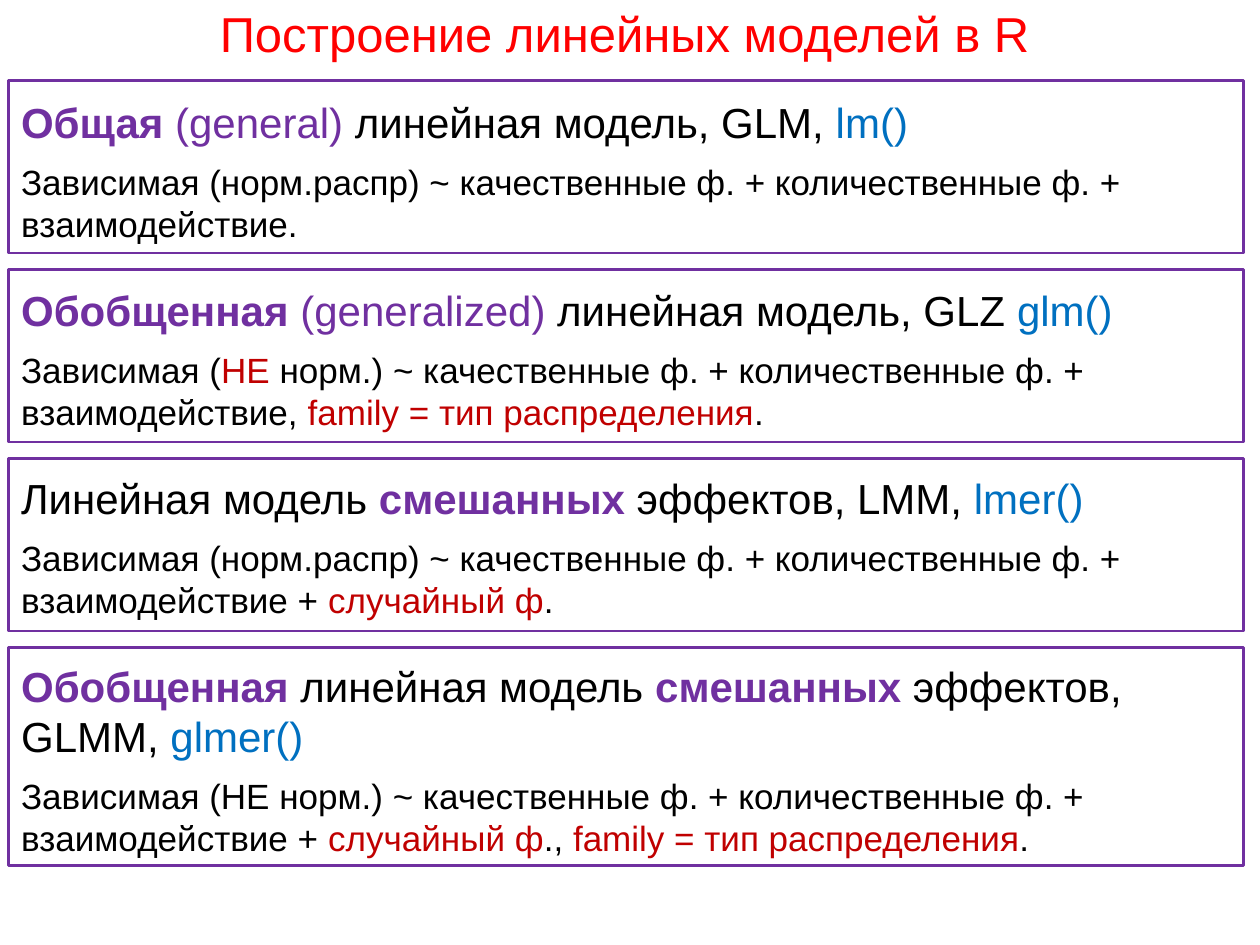
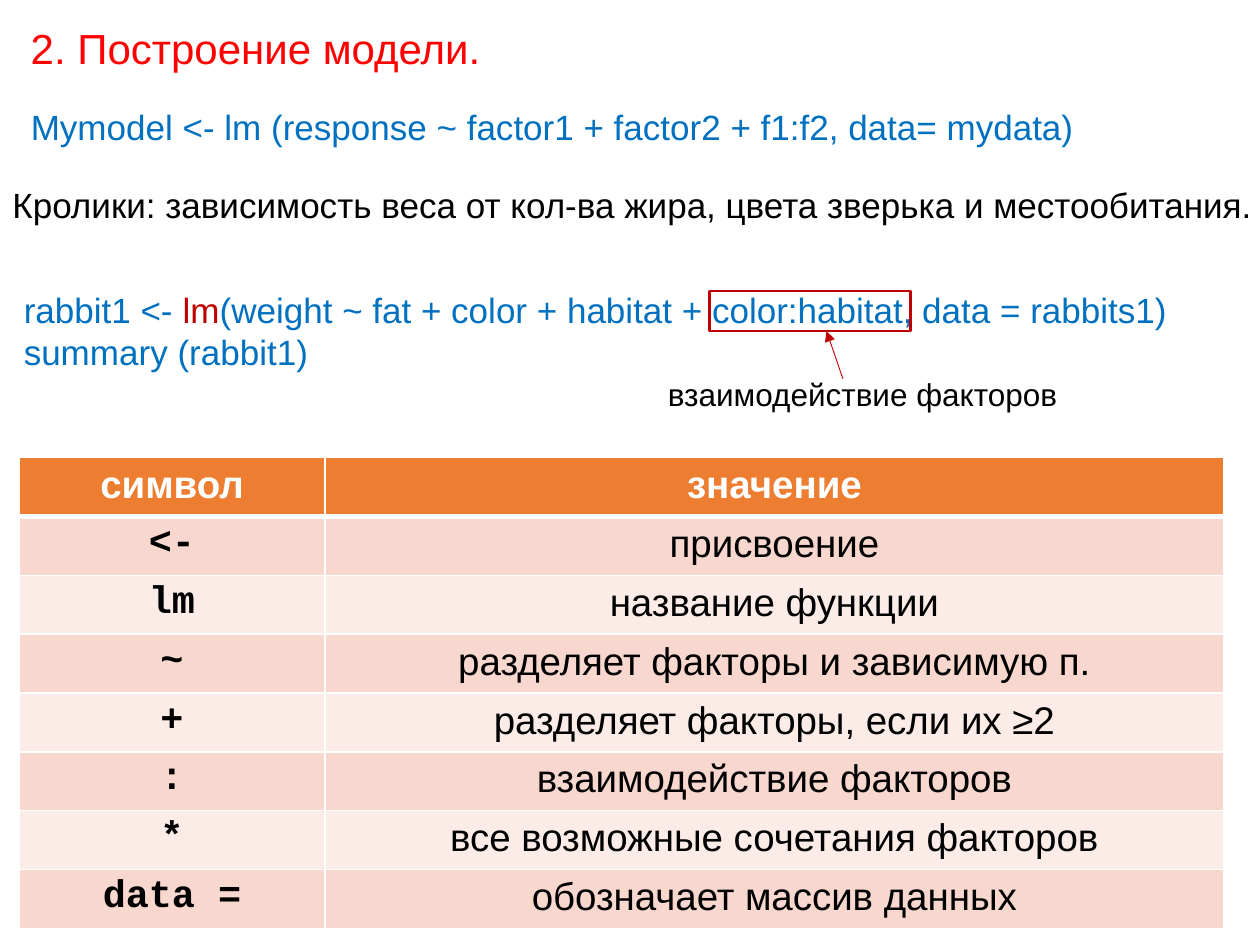
from pptx import Presentation
from pptx.util import Pt
from pptx.dml.color import RGBColor as Rgb
from pptx.enum.shapes import MSO_SHAPE as Shape, MSO_CONNECTOR as Line
from pptx.enum.text import MSO_AUTO_SIZE as Auto, PP_ALIGN as Align
from pptx.oxml.ns import qn
from lxml.etree import SubElement as Sub

RED = Rgb(0xFF, 0, 0)
DARK = Rgb(0xC0, 0, 0)
BLUE = Rgb(0, 0x70, 0xC0)
PLUM = Rgb(0x70, 0x30, 0xA0)
BLACK = Rgb(0, 0, 0)
WHITE = Rgb(0xFF, 0xFF, 0xFF)
HEAD = Rgb(0xED, 0x7D, 0x31)
BANDS = Rgb(0xFC, 0xEC, 0xE8), Rgb(0xF8, 0xD7, 0xCE)
SANS, MONO = "Arial", "Courier New"

NORM = "Зависимая (норм.распр) ~ "
SUM = "качественные ф. + количественные ф. + взаимодействие"
FAMILY = ("family = тип распределения", DARK)
RANDOM = ("случайный ф", DARK)

MODELS = [
    (526.5, 1,
     [("Общая ", PLUM, True), ("(general) ", PLUM),
      "линейная модель, GLM, ", ("lm()", BLUE)],
     [NORM + SUM + "."]),
    (644.5, 1,
     [("Обобщенная ", PLUM, True), ("(generalized) ", PLUM),
      "линейная модель, GLZ ", ("glm()", BLUE)],
     ["Зависимая (", ("НЕ", DARK), " норм.) ~ " + SUM + ", ", FAMILY, "."]),
    (628, 1,
     ["Линейная модель ", ("смешанных ", PLUM, True),
      "эффектов, LMM, ", ("lmer()", BLUE)],
     [NORM + SUM + " + ", RANDOM, "."]),
    (680.5, 2,
     [("Обобщенная ", PLUM, True), "линейная модель ",
      ("смешанных", PLUM, True), " эффектов, GLMM, ", ("glmer()", BLUE)],
     ["Зависимая (НЕ норм.) ~ " + SUM + " + ", RANDOM, "., ", FAMILY, "."]),
]

CALL = [
    [("rabbit1 <- ", BLUE), ("lm", DARK),
     ("(weight ~ fat + color + habitat + color:habitat, data = rabbits1)", BLUE)],
    [("summary (rabbit1)", BLUE)],
]

SIGNS = [
    ("символ", "значение"),
    ("<-", "присвоение"),
    ("lm", "название функции"),
    ("~", "разделяет факторы и зависимую п."),
    ("+", "разделяет факторы, если их ≥2"),
    (":", "взаимодействие факторов"),
    ("*", "все возможные сочетания факторов"),
    ("data =", "обозначает массив данных"),
]


def write(frame, paras, size=20, color=BLACK, bold=False, font=SANS, align=None):
    if isinstance(paras, str):
        paras = [[paras]]
    for i, runs in enumerate(paras):
        para = frame.add_paragraph() if i else frame.paragraphs[0]
        para.alignment = align
        for part in runs:
            text, hue, *thick = (part, color, bold) if isinstance(part, str) else part
            run = para.add_run()
            run.text = text
            run.font.name = font
            run.font.size = Pt(size)
            run.font.bold = bool(thick and thick[0])
            run.font.color.rgb = hue


def label(slide, paras, x, y, w, h, wrap=False, **form):
    frame = slide.shapes.add_textbox(Pt(x), Pt(y), Pt(w), Pt(h)).text_frame
    frame.word_wrap = wrap
    frame.auto_size = Auto.SHAPE_TO_FIT_TEXT
    write(frame, paras, **form)


def outline(slide, x, y, w, h, color):
    box = slide.shapes.add_shape(Shape.RECTANGLE, Pt(x), Pt(y), Pt(w), Pt(h))
    box.shadow.inherit = False
    box.fill.background()
    box.line.color.rgb = color
    box.line.width = Pt(1.5)


def arrow(slide, start, end, color):
    link = slide.shapes.add_connector(Line.STRAIGHT, *map(Pt, start + end))
    link.line.color.rgb = color
    link.line.width = Pt(0.5)
    Sub(link.line._get_or_add_ln(), qn("a:tailEnd"), type="triangle")
    Sub(link._element.spPr, qn("a:effectLst"))


def border(cell, row):
    props = cell._tc.get_or_add_tcPr()
    wide = {"T": row == 1, "B": row == 0}
    for side in "LRTB":
        width = Pt(3 if wide.get(side) else 1)
        edge = Sub(props, qn("a:ln" + side), w=str(width))
        Sub(Sub(edge, qn("a:solidFill")), qn("a:srgbClr"), val=str(WHITE))


def grid(slide, rows, x, y, cols, step):
    table = slide.shapes.add_table(len(rows), len(cols), Pt(x), Pt(y),
                                   Pt(sum(cols)), Pt(step * len(rows))).table
    for col, width in zip(table.columns, cols):
        col.width = Pt(width)
    for r, texts in enumerate(rows):
        table.rows[r].height = Pt(step)
        for c, text in enumerate(texts):
            cell = table.cell(r, c)
            border(cell, r)
            cell.fill.solid()
            cell.fill.fore_color.rgb = BANDS[r % 2] if r else HEAD
            write(cell.text_frame, text, size=22, align=Align.CENTER,
                  color=BLACK if r else WHITE, bold=r == 0 or c == 0,
                  font=MONO if r and c == 0 else SANS)


def models(slide):
    label(slide, "Построение линейных моделей в R", 118.5, -1.5, 483, 41,
          size=28, color=RED)
    for i, (width, lines, head, body) in enumerate(MODELS):
        top = 51.8 + 107.28 * i
        tall = 7.2 + 29.2 * lines
        label(slide, [head], 5, top, width, tall, wrap=lines > 1, size=24)
        label(slide, [body], 5, top + tall, 643, 55.5, wrap=True)
    for i, (_, lines, *_) in enumerate(MODELS):
        outline(slide, 5, 46 + 108 * i, 705.5, 72.6 + 26 * lines, PLUM)


def syntax(slide):
    label(slide, "2. Построение модели.", 10.5, 9.5, 274.5, 36, size=24, color=RED)
    label(slide, "Mymodel <- lm (response ~ factor1 + factor2 + f1:f2, data= mydata)",
          10.5, 57, 616.5, 31.5, color=BLUE)
    grid(slide, SIGNS, 10.8, 261.5, (175, 513.5), 33.57)
    label(slide, "Кролики: зависимость веса от кол-ва жира, цвета зверька и местообитания.",
          0, 101.5, 727, 31.5)
    label(slide, CALL, 6.5, 161.5, 672, 55.5)
    outline(slide, 405.3, 166.2, 115, 23, DARK)
    label(slide, "взаимодействие факторов", 374.5, 210.5, 242, 29, size=18)
    arrow(slide, (481.7, 216.5), (472.3, 189.2), DARK)


def main():
    deck = Presentation()
    deck.slide_width, deck.slide_height = Pt(720), Pt(540)
    for build in (models, syntax):
        build(deck.slides.add_slide(deck.slide_layouts[6]))
    deck.save("out.pptx")


if __name__ == "__main__":
    main()
